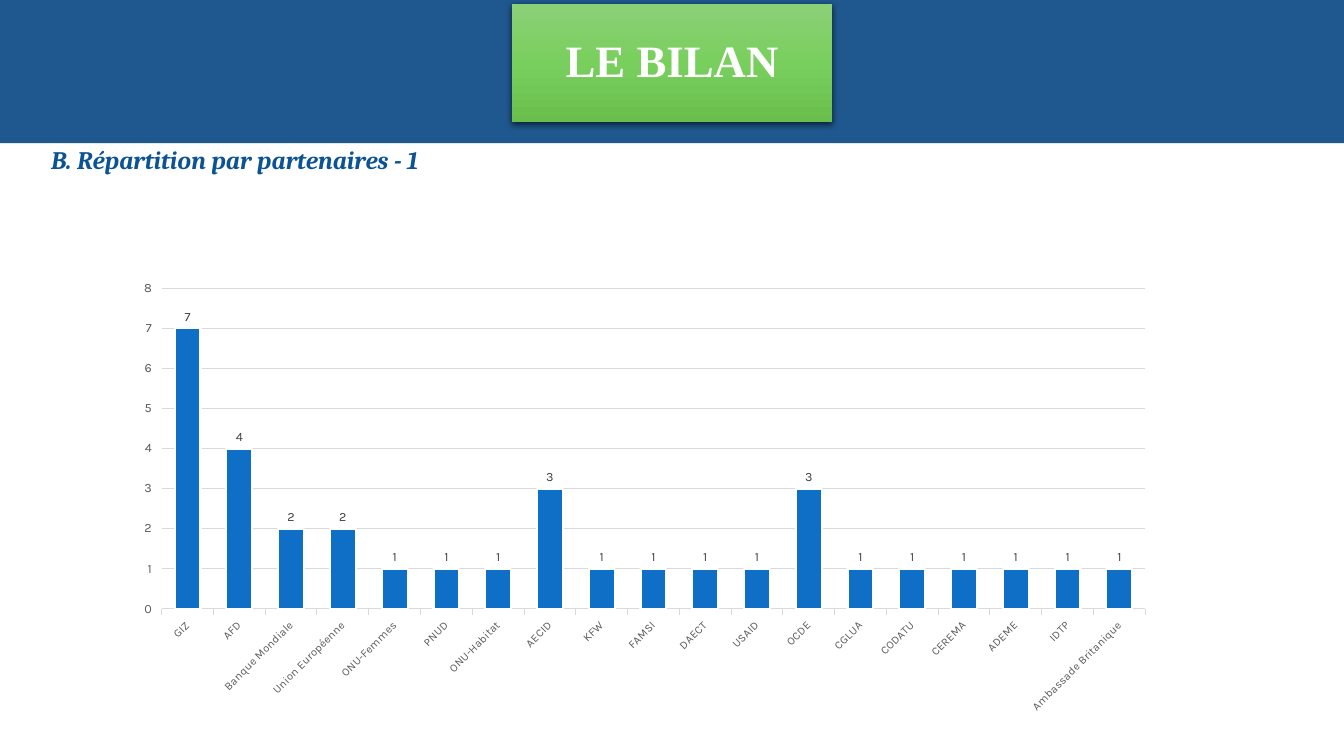
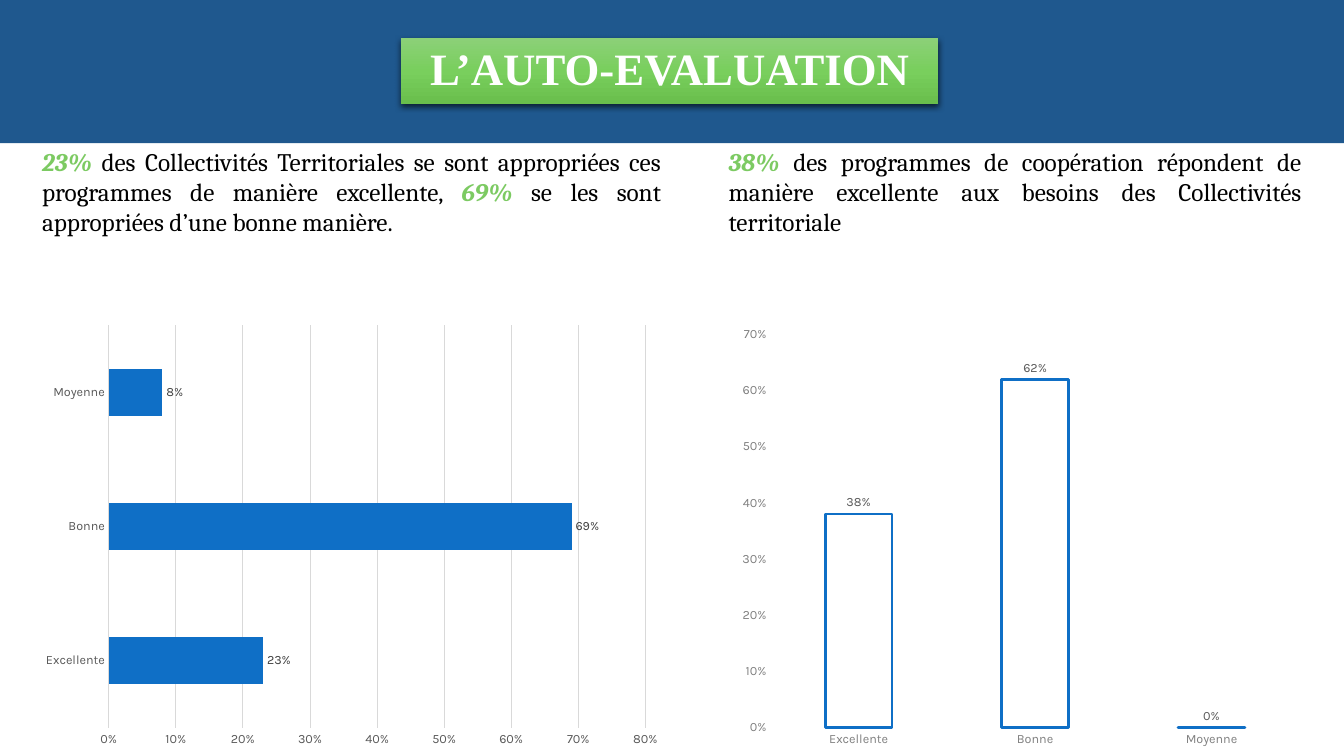
from dataclasses import dataclass
from typing import NamedTuple, Optional

from lxml import etree
from pptx import Presentation
from pptx import util as u
from pptx.chart.data import CategoryChartData
from pptx.dml.color import RGBColor
from pptx.enum import chart as ch
from pptx.enum import shapes, text
from pptx.oxml import ns, parse_xml

BAND, HEADING, BLUE, GREEN = "1F588E", "0B5394", "0F6FC6", "7CCA62"
WHITE, BLACK, GRID, GREY, DARK = "FFFFFF", "000000", "D9D9D9", "595959", "404040"
TITLE_STOPS = ((0, "8BD077"), (50, "79CF5D"), (100, "69BE4C"))
SERIF, TITLE_FONT, CHART_FONT = "Cambria", "Times New Roman", "Karla"
SLIDE_W, SLIDE_H, BAND_H = 33.87, 19.05, 3.61


class Box(NamedTuple):
    x: float
    y: float
    w: float
    h: float

    def cm(self) -> list:
        return [u.Cm(v) for v in self]


class Run(NamedTuple):
    text: str
    strong: bool = False


@dataclass
class ChartSpec:
    box: Box
    plot: Box
    kind: ch.XL_CHART_TYPE
    cats: tuple
    vals: tuple
    top: float
    step: float
    gap: int
    overlap: int = 0
    fmt: str = "General"
    fill: Optional[str] = BLUE
    outline: Optional[str] = None
    outline_pt: float = 1.5
    grid: bool = True
    cat_line: bool = True
    cat_pt: int = 9
    axis_color: str = GREY
    label_color: str = DARK
    tick: ch.XL_TICK_MARK = ch.XL_TICK_MARK.NONE
    rotation: Optional[int] = None


def rgb(value: str) -> RGBColor:
    return RGBColor.from_string(value)


def set_font(font, name: str, size: float, color: str, bold=False, italic=False) -> None:
    font.name, font.size = name, u.Pt(size)
    font.bold, font.italic = bold, italic
    font.color.rgb = rgb(color)


def add_text(p, content: str, **fmt) -> None:
    r = p.add_run()
    r.text = content
    set_font(r.font, **fmt)


def set_line(line, color: Optional[str], width: float = 0.75) -> None:
    if color is None:
        line.fill.background()
    else:
        line.color.rgb = rgb(color)
        line.width = u.Pt(width)


def add_block(s, geometry, box: Box):
    sp = s.shapes.add_shape(geometry, *box.cm())
    sp.shadow.inherit = False
    set_line(sp.line, None)
    return sp


def color_xml(tag: str, attrs: str, color: str, inner: str = ""):
    return parse_xml(f'<a:{tag} {ns.nsdecls("a")} {attrs}>'
                     f'<a:srgbClr val="{color}">{inner}</a:srgbClr></a:{tag}>')


def add_title(s, content: str, box: Box) -> None:
    sp = add_block(s, shapes.MSO_SHAPE.ROUND_2_DIAG_RECTANGLE, box)
    sp.adjustments[0] = 0
    sp.fill.gradient()
    sp.fill.gradient_angle = 270
    stops = sp._element.spPr.find(".//" + ns.qn("a:gsLst"))
    for old in list(stops):
        stops.remove(old)
    for pos, color in TITLE_STOPS:
        stops.append(color_xml("gs", f'pos="{pos * 1000}"', color))
    shadow = 'blurRad="57150" dist="19050" dir="5400000" algn="ctr" rotWithShape="0"'
    sp._element.spPr.find(ns.qn("a:effectLst")).append(
        color_xml("outerShdw", shadow, BLACK, '<a:alpha val="63000"/>'))
    tf = sp.text_frame
    tf.word_wrap = True
    tf.vertical_anchor = text.MSO_ANCHOR.MIDDLE
    p = tf.paragraphs[0]
    p.alignment = text.PP_ALIGN.CENTER
    p.line_spacing = 0.9
    add_text(p, content, name=TITLE_FONT, size=32, color=WHITE, bold=True)


def add_slide(prs, title: str, title_box: Box):
    s = prs.slides.add_slide(prs.slide_layouts[6])
    band = add_block(s, shapes.MSO_SHAPE.RECTANGLE, Box(0, 0, SLIDE_W, BAND_H))
    band.fill.solid()
    band.fill.fore_color.rgb = rgb(BAND)
    add_title(s, title, title_box)
    return s


def add_paragraph(s, box: Box, runs: list, accent: str, align=text.PP_ALIGN.JUSTIFY) -> None:
    tf = s.shapes.add_textbox(*box.cm()).text_frame
    tf.word_wrap = True
    p = tf.paragraphs[0]
    p.alignment = align
    for run in runs:
        add_text(p, run.text, name=SERIF, size=18, color=accent if run.strong else BLACK,
                 bold=run.strong, italic=run.strong)


def set_plot_layout(chart, plot: Box) -> None:
    area = chart._chartSpace.chart.plotArea
    for old in area.findall(ns.qn("c:layout")):
        area.remove(old)
    layout = etree.Element(ns.qn("c:layout"))
    manual = etree.SubElement(layout, ns.qn("c:manualLayout"))
    parts = [("layoutTarget", "inner"), ("xMode", "edge"), ("yMode", "edge")]
    for tag, val in parts + list(plot._asdict().items()):
        etree.SubElement(manual, ns.qn(f"c:{tag}")).set("val", str(val))
    area.insert(0, layout)


def add_bars(s, c: ChartSpec) -> None:
    data = CategoryChartData(number_format=c.fmt)
    data.categories = c.cats
    data.add_series("Series 1", c.vals)
    chart = s.shapes.add_chart(c.kind, *c.box.cm(), data).chart
    chart.has_title = chart.has_legend = False
    set_font(chart.font, CHART_FONT, 10, BLACK)
    set_plot_layout(chart, c.plot)

    cat, val = chart.category_axis, chart.value_axis
    for axis, size in ((cat, c.cat_pt), (val, 9)):
        axis.major_tick_mark = c.tick
        axis.minor_tick_mark = ch.XL_TICK_MARK.NONE
        set_font(axis.tick_labels.font, CHART_FONT, size, c.axis_color)
    set_line(cat.format.line, GRID if c.cat_line else None)
    set_line(val.format.line, None)
    if c.rotation is not None:
        body = cat._element.find(".//" + ns.qn("a:bodyPr"))
        body.set("rot", str(c.rotation * 60000))
        body.set("vert", "horz")
    val.minimum_scale, val.maximum_scale, val.major_unit = 0, c.top, c.step
    val.tick_labels.number_format = c.fmt
    val.tick_labels.number_format_is_linked = False
    val.has_major_gridlines = c.grid
    if c.grid:
        set_line(val.major_gridlines.format.line, GRID)

    plot = chart.plots[0]
    plot.vary_by_categories = False
    plot.gap_width, plot.overlap = c.gap, c.overlap
    series = plot.series[0]
    series.invert_if_negative = False
    if c.fill is None:
        series.format.fill.background()
    else:
        series.format.fill.solid()
        series.format.fill.fore_color.rgb = rgb(c.fill)
    set_line(series.format.line, c.outline, c.outline_pt)
    labels = series.data_labels
    labels.show_value = True
    labels.number_format = c.fmt
    labels.number_format_is_linked = False
    labels.position = ch.XL_LABEL_POSITION.OUTSIDE_END
    set_font(labels.font, CHART_FONT, 9, c.label_color)


PARTNERS = {
    "GIZ": 7, "AFD": 4, "Banque Mondiale": 2, "Union Européenne": 2, "ONU-Femmes": 1,
    "PNUD": 1, "ONU-Habitat": 1, "AECID": 3, "KFW": 1, "FAMSI": 1, "DAECT": 1,
    "USAID": 1, "OCDE": 3, "CGLUA": 1, "CODATU": 1, "CEREMA": 1, "ADEME": 1,
    "IDTP": 1, "Ambassade Britanique": 1,
}
RATINGS = ("Excellente", "Bonne", "Moyenne")


def build_results(prs) -> None:
    s = add_slide(prs, "LE BILAN", Box(12.9, 0.1, 8.08, 2.98))
    add_paragraph(s, Box(1.04, 3.5, 15.11, 1.07),
                  [Run("B. Répartition par partenaires - 1", True)],
                  HEADING, text.PP_ALIGN.LEFT)
    add_bars(s, ChartSpec(
        Box(3.02, 6.81, 26.37, 11.38), Box(0.04, 0.04, 0.94, 0.71),
        ch.XL_CHART_TYPE.COLUMN_CLUSTERED, tuple(PARTNERS), tuple(PARTNERS.values()),
        top=8, step=1, gap=100, outline=WHITE, cat_pt=8,
        tick=ch.XL_TICK_MARK.OUTSIDE, rotation=-45))


def build_self_assessment(prs) -> None:
    s = add_slide(prs, "L’AUTO-EVALUATION", Box(10.11, 0.97, 13.54, 1.65))
    add_paragraph(s, Box(0.81, 3.56, 16.1, 2.57), [
        Run("23%", True),
        Run(" des Collectivités Territoriales se sont appropriées ces programmes "
            "de manière excellente, "),
        Run("69%", True),
        Run(" se les sont appropriées d’une bonne manière."),
    ], GREEN)
    add_paragraph(s, Box(18.11, 3.56, 14.94, 2.57), [
        Run("38%", True),
        Run(" des programmes de coopération répondent de manière excellente "
            "aux besoins des Collectivités territoriale"),
    ], GREEN)
    add_bars(s, ChartSpec(
        Box(0.81, 7.98, 16.1, 11.02), Box(0.12, 0.02, 0.84, 0.92),
        ch.XL_CHART_TYPE.BAR_CLUSTERED, RATINGS, (0.23, 0.69, 0.08),
        top=0.8, step=0.1, gap=182, fmt="0%"))
    add_bars(s, ChartSpec(
        Box(18.39, 7.98, 14.66, 11.02), Box(0.07, 0.04, 0.91, 0.9),
        ch.XL_CHART_TYPE.COLUMN_CLUSTERED, RATINGS, (0.38, 0.62, 0),
        top=0.7, step=0.1, gap=164, overlap=-35, fmt="0%", fill=None,
        outline=BLUE, outline_pt=2, grid=False, cat_line=False,
        axis_color="808080", label_color=GREY))


def main() -> None:
    prs = Presentation()
    prs.slide_width, prs.slide_height = u.Cm(SLIDE_W), u.Cm(SLIDE_H)
    build_results(prs)
    build_self_assessment(prs)
    prs.save("out.pptx")


if __name__ == "__main__":
    main()
